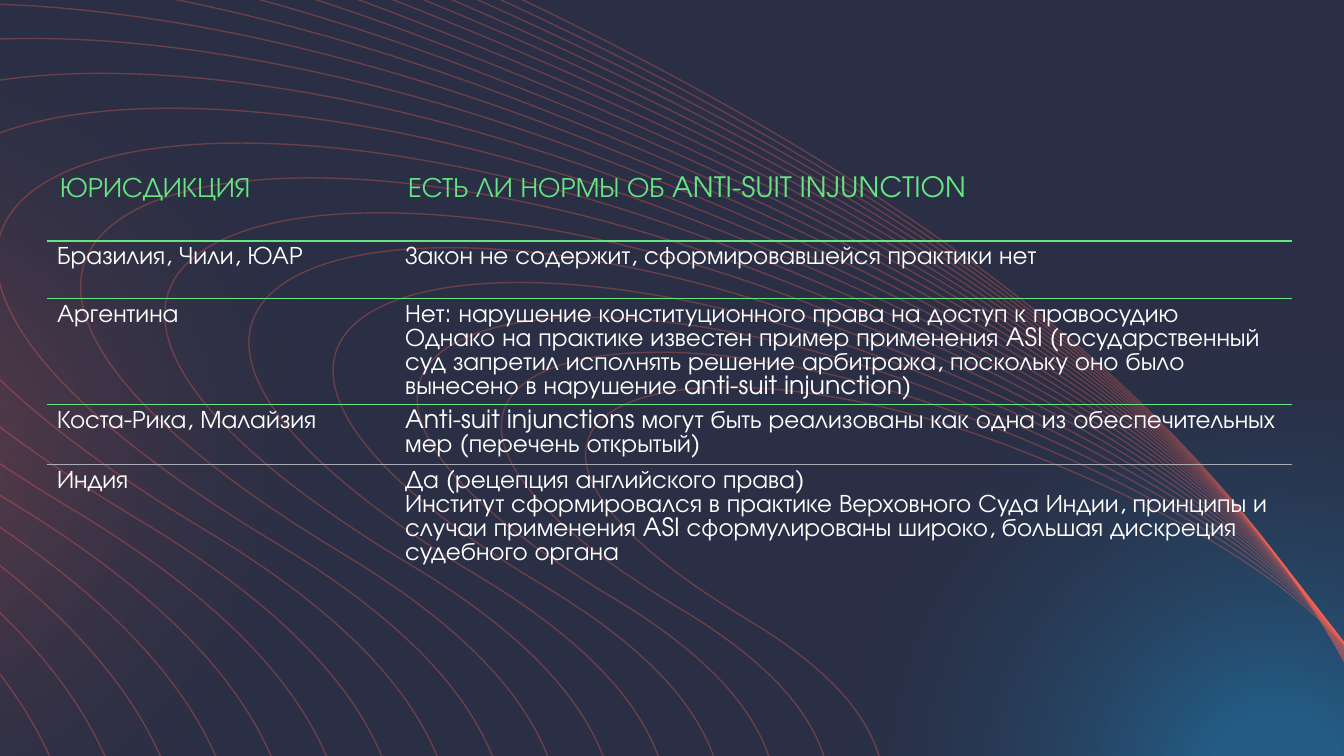
from dataclasses import dataclass

from lxml.etree import SubElement
from pptx import Presentation
from pptx.dml.color import RGBColor
from pptx.enum.shapes import MSO_SHAPE
from pptx.enum.text import MSO_ANCHOR
from pptx.oxml import parse_xml
from pptx.oxml.ns import nsdecls, qn
from pptx.util import Inches, Pt


@dataclass(frozen=True)
class Theme:
    font: str = "TeX Gyre Adventor"
    background: str = "2A2F45"
    text: str = "FFFFFF"
    accent: str = "66E582"
    rule: str = "A9ACB5"
    coral: str = "FF6455"
    blue: str = "1B94D5"
    header_size: int = 20
    body_size: int = 18
    leading: float = 0.95
    wave_alpha: int = 30


# Anchor and control points of the closed wave, in inches.
INNER_WAVE = [(7.42, 6.15), (3.94, 4.06), (6.69, 3.15), (10.02, 4.43),
              (13.34, 5.7), (14.89, 7.31), (13.71, 9.83), (13.19, 10.95),
              (10.33, 13.04), (8.32, 11.4), (6.32, 9.75), (10.9, 8.24), (7.42, 6.15)]
OUTER_WAVE = [(-6.65, 3.85), (-17.58, -2.73), (-8.95, -5.59), (1.49, -1.58),
              (11.94, 2.44), (16.81, 7.48), (13.12, 15.4), (11.47, 18.94),
              (2.48, 25.51), (-3.82, 20.34), (-10.12, 15.16), (4.28, 10.42), (-6.65, 3.85)]
WAVE_COUNT = 22

ROWS = [
    ("ЮРИСДИКЦИЯ", ["ЕСТЬ ЛИ НОРМЫ ОБ ANTI-SUIT INJUNCTION"]),
    ("Бразилия, Чили, ЮАР", ["Закон не содержит, сформировавшейся практики нет"]),
    ("Аргентина", [
        "Нет: нарушение конституционного права на доступ к правосудию",
        "Однако на практике известен пример применения ASI (государственный суд "
        "запретил исполнять решение арбитража, поскольку оно было вынесено "
        "в нарушение anti-suit injunction)"]),
    ("Коста-Рика, Малайзия", [
        "Anti-suit injunctions могут быть реализованы как одна из обеспечительных "
        "мер (перечень открытый)"]),
    ("Индия", [
        "Да (рецепция английского права)\n"
        "Институт сформировался в практике Верховного Суда Индии, принципы "
        "и случаи применения ASI сформулированы широко, большая дискреция "
        "судебного органа"]),
]
ROW_HEIGHTS = [0.71, 0.57, 1.04, 0.6, 1.04]


def bezier_point(controls, t):
    weights = ((1 - t) ** 3, 3 * t * (1 - t) ** 2, 3 * t ** 2 * (1 - t), t ** 3)
    return tuple(sum(w * c[axis] for w, c in zip(weights, controls)) for axis in (0, 1))


class SlideBuilder:
    def __init__(self, deck, theme):
        self.theme = theme
        self.width, self.height = deck.slide_width, deck.slide_height
        self.slide = deck.slides.add_slide(deck.slide_layouts[6])
        fill = self.slide.background.fill
        fill.solid()
        fill.fore_color.rgb = RGBColor.from_string(theme.background)

    def glow(self, left, top, size, color, start, alpha):
        """Add a round glow; left and top are shares of the slide, size a share of its width."""
        diameter = int(size * self.width)
        ellipse = self.slide.shapes.add_shape(
            MSO_SHAPE.OVAL, int(left * self.width), int(top * self.height), diameter, diameter)
        ellipse.shadow.inherit = False
        ellipse.line.fill.background()
        stops = ((start, color, alpha), (81, self.theme.background, 0))
        stop_xml = "".join(
            f'<a:gs pos="{position * 1000}"><a:srgbClr val="{rgb}">'
            f'<a:alpha val="{opacity * 1000}"/></a:srgbClr></a:gs>'
            for position, rgb, opacity in stops)
        gradient = parse_xml(
            f'<a:gradFill {nsdecls("a")} rotWithShape="1"><a:gsLst>{stop_xml}</a:gsLst>'
            '<a:path path="circle"><a:fillToRect l="50000" t="50000" r="50000" b="50000"/>'
            '</a:path></a:gradFill>')
        ellipse.element.spPr.find(qn("a:prstGeom")).addnext(gradient)

    def wave(self, points):
        """Add a closed outline of cubic curves; the sampled outline only sizes its frame."""
        points = [(Inches(x), Inches(y)) for x, y in points]
        segments = [points[i:i + 4] for i in range(0, len(points) - 1, 3)]
        samples = [bezier_point(segment, step / 30)
                   for segment in segments for step in range(1, 31)]
        builder = self.slide.shapes.build_freeform(*points[0])
        builder.add_line_segments(samples, close=True)
        outline = builder.convert_to_shape()
        outline.shadow.inherit = False
        outline.fill.background()
        outline.line.width = Pt(1)
        outline.line.color.rgb = RGBColor.from_string(self.theme.coral)
        color = outline.line._get_or_add_ln().find(".//" + qn("a:srgbClr"))
        SubElement(color, qn("a:alpha"), val=str(self.theme.wave_alpha * 1000))

        curve = outline.element.spPr.find(".//" + qn("a:pathLst"))[0]
        for child in list(curve):
            curve.remove(child)
        commands = [("a:moveTo", points[:1])]
        commands += [("a:cubicBezTo", segment[1:]) for segment in segments]
        for tag, targets in commands:
            command = SubElement(curve, qn(tag))
            for x, y in targets:
                SubElement(command, qn("a:pt"), x=str(x - outline.left), y=str(y - outline.top))
        SubElement(curve, qn("a:close"))

    def border(self, cell, side, color=None, width=1.0):
        line = SubElement(cell._tc.get_or_add_tcPr(), qn(f"a:{side}"), w=str(Pt(width)))
        if color:
            SubElement(SubElement(line, qn("a:solidFill")), qn("a:srgbClr"), val=color)
        else:
            SubElement(line, qn("a:noFill"))

    def cell(self, cell, texts, is_header):
        theme = self.theme
        size = theme.header_size if is_header else theme.body_size
        cell.vertical_anchor = MSO_ANCHOR.TOP
        cell.margin_left = cell.margin_right = Inches(0.13 if is_header else 0.1)
        cell.margin_top = cell.margin_bottom = Inches(0.07 if is_header else 0.05)
        frame = cell.text_frame
        for index, text in enumerate(texts):
            para = frame.add_paragraph() if index else frame.paragraphs[0]
            para.text = text
            para.line_spacing = Pt(size * theme.leading)
            para.font.name = theme.font
            para.font.size = Pt(size)
            para.font.color.rgb = RGBColor.from_string(theme.accent if is_header else theme.text)

    def table(self, rows, row_heights, left, top, column_shares):
        """Add the table; left, top and the column widths are shares of the slide."""
        widths = [int(share * self.width) for share in column_shares]
        table = self.slide.shapes.add_table(
            len(rows), len(widths), int(left * self.width), int(top * self.height),
            sum(widths), Inches(sum(row_heights))).table
        table.first_row = table.horz_banding = False
        for column, width in zip(table.columns, widths):
            column.width = width
        accent, rule = self.theme.accent, self.theme.rule
        rules = [(None, 1), (accent, 1.5), (accent, 0.75), (accent, 0.75), (rule, 0.75), (None, 1)]
        for index, (name, details) in enumerate(rows):
            table.rows[index].height = Inches(row_heights[index])
            for column, texts in enumerate(([name], details)):
                cell = table.cell(index, column)
                self.cell(cell, texts, is_header=index == 0)
                self.border(cell, "lnL")
                self.border(cell, "lnR")
                self.border(cell, "lnT", *rules[index])
                self.border(cell, "lnB", *rules[index + 1])
                cell.fill.background()


def main():
    deck = Presentation()
    deck.slide_width, deck.slide_height = Inches(13.33), Inches(7.5)
    theme = Theme()
    page = SlideBuilder(deck, theme)
    page.glow(0.63, 0.47, 0.64, theme.blue, start=12, alpha=44)
    page.glow(-0.4, 0.03, 0.64, theme.coral, start=18, alpha=17)
    for index in range(WAVE_COUNT):
        share = index / (WAVE_COUNT - 1)
        page.wave([(x0 + (x1 - x0) * share, y0 + (y1 - y0) * share)
                   for (x0, y0), (x1, y1) in zip(INNER_WAVE, OUTER_WAVE)])
    page.table(ROWS, ROW_HEIGHTS, left=0.035, top=0.224, column_shares=(0.259, 0.667))
    deck.save("out.pptx")


if __name__ == "__main__":
    main()
